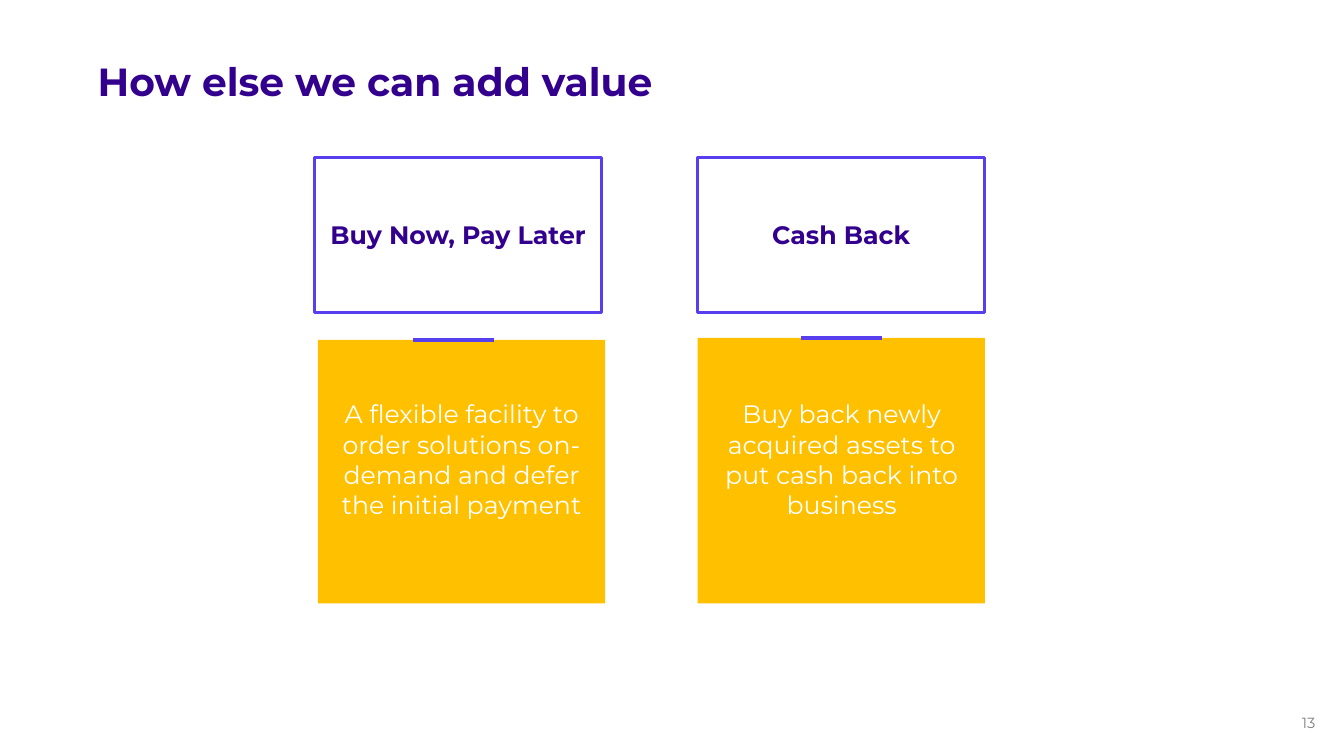
from dataclasses import dataclass

from lxml.etree import SubElement
from pptx import Presentation
from pptx.dml.color import RGBColor
from pptx.enum.shapes import MSO_CONNECTOR, MSO_SHAPE
from pptx.enum.text import MSO_ANCHOR, MSO_AUTO_SIZE, PP_ALIGN
from pptx.oxml.ns import qn
from pptx.util import Pt


@dataclass(frozen=True)
class Theme:
    font: str = "Montserrat"
    ink: str = "33008E"
    accent: str = "573EEF"
    card: str = "FFC000"
    white: str = "FFFFFF"
    grey: str = "808080"
    title_size: float = 28
    text_size: float = 18
    number_size: float = 10.5


THEME = Theme()
CARD_WIDTH = 205.2
CARD_BOTTOM = 431

# Left edges and card top differ slightly between the two offers.
OFFERS = [
    dict(heading="Buy Now, Pay Later", heading_left=224.6,
         card_left=227, card_top=242.7, accent_left=295.2,
         text="A flexible facility to order solutions on-demand and defer the initial payment",
         text_left=234.7, text_width=190.1),
    dict(heading="Cash Back", heading_left=498.2,
         card_left=498.4, card_top=241.4, accent_left=572.4,
         text="Buy back newly acquired assets to put cash back into business",
         text_left=504.7, text_width=193),
]


def rgb(value):
    return RGBColor.from_string(value)


def write(shape, text, size, color, bold=False, align=PP_ALIGN.CENTER,
          anchor=MSO_ANCHOR.MIDDLE, margins=(0, 0, 0, 0), wrap=True):
    """Put one formatted paragraph in a shape; margins are left, top, right, bottom."""
    tf = shape.text_frame
    left, top, right, bottom = map(Pt, margins)
    frame_format = dict(auto_size=MSO_AUTO_SIZE.NONE, word_wrap=wrap,
                        vertical_anchor=anchor, margin_left=left, margin_top=top,
                        margin_right=right, margin_bottom=bottom)
    for name, value in frame_format.items():
        setattr(tf, name, value)
    p = tf.paragraphs[0]
    p.alignment = align
    r = p.add_run()
    r.text = text
    for name, value in dict(name=THEME.font, size=Pt(size), bold=bold).items():
        setattr(r.font, name, value)
    r.font.color.rgb = rgb(color)
    return p


def add_title(s, text):
    title = s.shapes.title
    place = dict(left=Pt(69.8), top=Pt(44.6), width=Pt(869.8), height=Pt(67.7))
    for name, value in place.items():
        setattr(title, name, value)
    p = write(title, text, THEME.title_size, THEME.ink, bold=True, align=PP_ALIGN.LEFT,
              anchor=MSO_ANCHOR.TOP, margins=(0, 0, 7.2, 3.6))
    p.line_spacing = 0.9


def add_box(s, left, top, width, height, fill=None, line=None):
    sp = s.shapes.add_shape(MSO_SHAPE.RECTANGLE, *map(Pt, (left, top, width, height)))
    sp.shadow.inherit = False
    if fill:
        sp.fill.solid()
        sp.fill.fore_color.rgb = rgb(fill)
    else:
        sp.fill.background()
    if line:
        sp.line.color.rgb = rgb(line)
        sp.line.width = Pt(2)
    else:
        sp.line.fill.background()
    return sp


def add_text(s, left, top, width, height, *args, **kwargs):
    box = s.shapes.add_textbox(*map(Pt, (left, top, width, height)))
    write(box, *args, **kwargs)


def add_accent(s, left, y, width=57.6):
    line = s.shapes.add_connector(MSO_CONNECTOR.STRAIGHT, Pt(left), Pt(y),
                                  Pt(left + width), Pt(y))
    line.line.color.rgb = rgb(THEME.accent)
    line.line.width = Pt(3)
    SubElement(line._element.spPr, qn("a:effectLst"))


def add_offer(s, offer):
    heading = add_box(s, offer["heading_left"], 112.3, CARD_WIDTH, 110.9, line=THEME.accent)
    write(heading, offer["heading"], THEME.text_size, THEME.ink, bold=True)
    top = offer["card_top"]
    add_box(s, offer["card_left"], top, CARD_WIDTH, CARD_BOTTOM - top, fill=THEME.card)
    add_accent(s, offer["accent_left"], top + 0.3)
    add_text(s, offer["text_left"], 284.4, offer["text_width"], 87.1,
             offer["text"], THEME.text_size, THEME.white)


def main():
    prs = Presentation()
    prs.slide_width, prs.slide_height = Pt(960), Pt(540)
    s = prs.slides.add_slide(prs.slide_layouts[5])
    add_title(s, "How else we can add value")
    for offer in OFFERS:
        add_offer(s, offer)
    add_text(s, 915.1, 506.2, 27.4, 19.4, "13", THEME.number_size, THEME.grey,
             align=PP_ALIGN.RIGHT, margins=(7.2, 3.6, 2.9, 3.6), wrap=False)
    prs.save("out.pptx")


if __name__ == "__main__":
    main()
